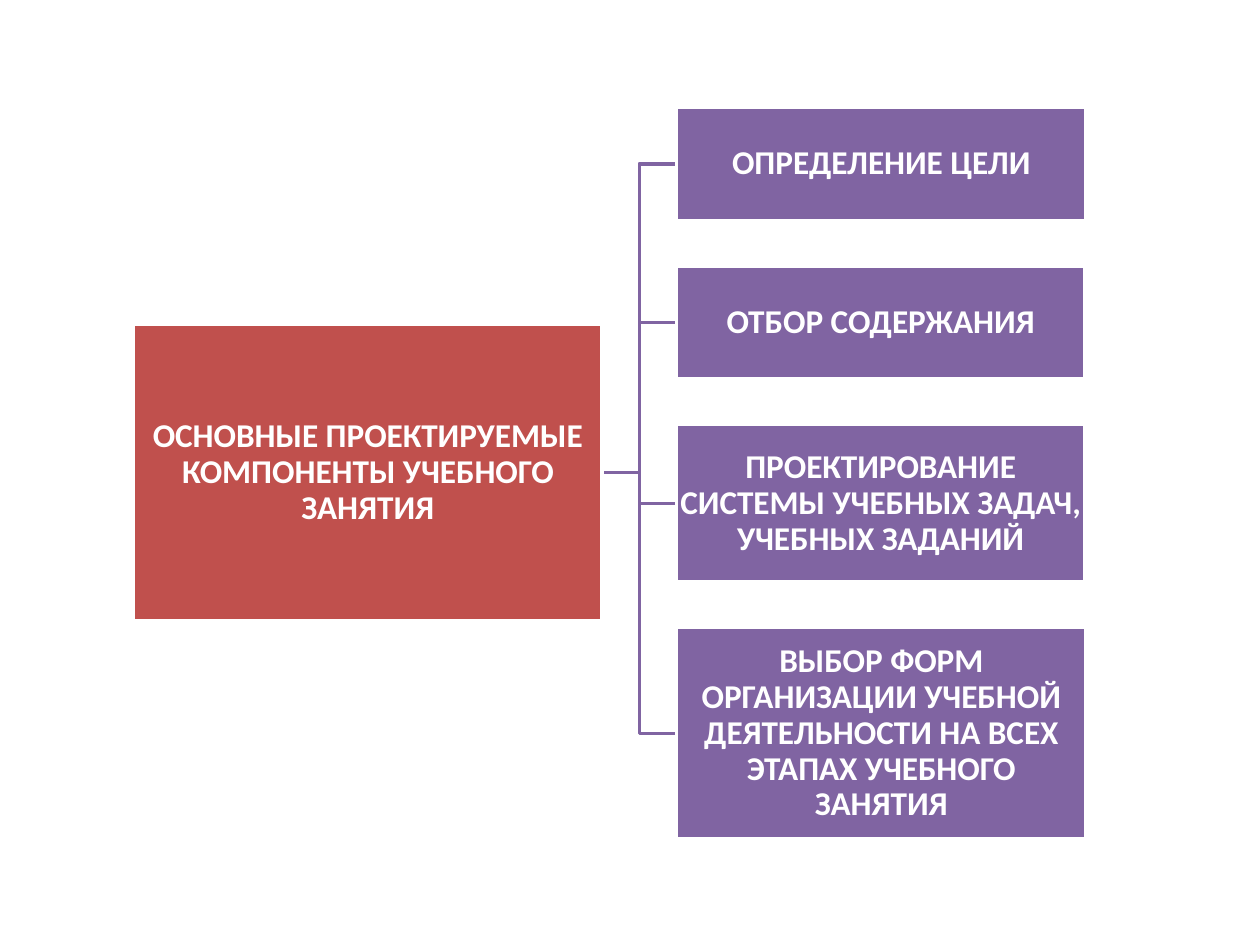
from lxml.etree import SubElement
from pptx import Presentation
from pptx.dml.color import RGBColor
from pptx.enum.shapes import MSO_CONNECTOR, MSO_SHAPE
from pptx.enum.text import MSO_ANCHOR, PP_ALIGN
from pptx.oxml.ns import qn
from pptx.util import Inches, Pt

RED = RGBColor(0xC0, 0x50, 0x4D)
PURPLE = RGBColor(0x80, 0x64, 0xA2)
WHITE = RGBColor(0xFF, 0xFF, 0xFF)

TOPIC = "ОСНОВНЫЕ ПРОЕКТИРУЕМЫЕ КОМПОНЕНТЫ УЧЕБНОГО ЗАНЯТИЯ"
COMPONENTS = [  # text, box width, box height
    ("ОПРЕДЕЛЕНИЕ ЦЕЛИ", 3.25, 0.9),
    ("ОТБОР СОДЕРЖАНИЯ", 3.24, 0.9),
    ("ПРОЕКТИРОВАНИЕ СИСТЕМЫ УЧЕБНЫХ ЗАДАЧ, УЧЕБНЫХ ЗАДАНИЙ", 3.24, 1.25),
    ("ВЫБОР ФОРМ ОРГАНИЗАЦИИ УЧЕБНОЙ ДЕЯТЕЛЬНОСТИ НА ВСЕХ ЭТАПАХ УЧЕБНОГО ЗАНЯТИЯ", 3.25, 1.68),
]

SLIDE_WIDTH, SLIDE_HEIGHT = 10, 7.5
TOPIC_COLUMN, COMPONENT_COLUMN = 1.06, 5.37
TOPIC_WIDTH, TOPIC_HEIGHT = 3.72, 2.36
FIRST_ROW, ROW_GAP = 0.85, 0.36

deck = Presentation()
deck.slide_width = Inches(SLIDE_WIDTH)
deck.slide_height = Inches(SLIDE_HEIGHT)
page = deck.slides.add_slide(deck.slide_layouts[6])


def add_box(text, left, top, width, height, color):
    box = page.shapes.add_shape(
        MSO_SHAPE.RECTANGLE, Inches(left), Inches(top), Inches(width), Inches(height))
    box.shadow.inherit = False
    box.fill.solid()
    box.fill.fore_color.rgb = color
    box.line.color.rgb = WHITE
    box.line.width = Pt(2)
    frame = box.text_frame
    frame.word_wrap = True
    frame.vertical_anchor = MSO_ANCHOR.MIDDLE
    frame.margin_left = frame.margin_right = Inches(0.01)
    frame.margin_top = frame.margin_bottom = Inches(0.01)
    frame.text = text
    para = frame.paragraphs[0]
    para.alignment = PP_ALIGN.CENTER
    para.line_spacing = 0.9
    font = para.runs[0].font
    font.name = "Calibri"
    font.size = Pt(19)
    font.bold = True
    font.color.rgb = WHITE
    return box


# Branches come first so that the white box borders cover their ends
branches = []
for component in COMPONENTS:
    branch = page.shapes.add_connector(MSO_CONNECTOR.ELBOW, 0, 0, 0, 0)
    branch.line.color.rgb = PURPLE
    branch.line.width = Pt(2)
    SubElement(branch.element.spPr, qn("a:effectLst"))
    branches.append(branch)

topic_box = add_box(TOPIC, TOPIC_COLUMN, (SLIDE_HEIGHT - TOPIC_HEIGHT) / 2,
                    TOPIC_WIDTH, TOPIC_HEIGHT, RED)

top = FIRST_ROW
for branch, (text, width, height) in zip(branches, COMPONENTS):
    component_box = add_box(text, COMPONENT_COLUMN, top, width, height, PURPLE)
    branch.begin_connect(topic_box, 3)
    branch.end_connect(component_box, 1)
    top += height + ROW_GAP

deck.save("out.pptx")
